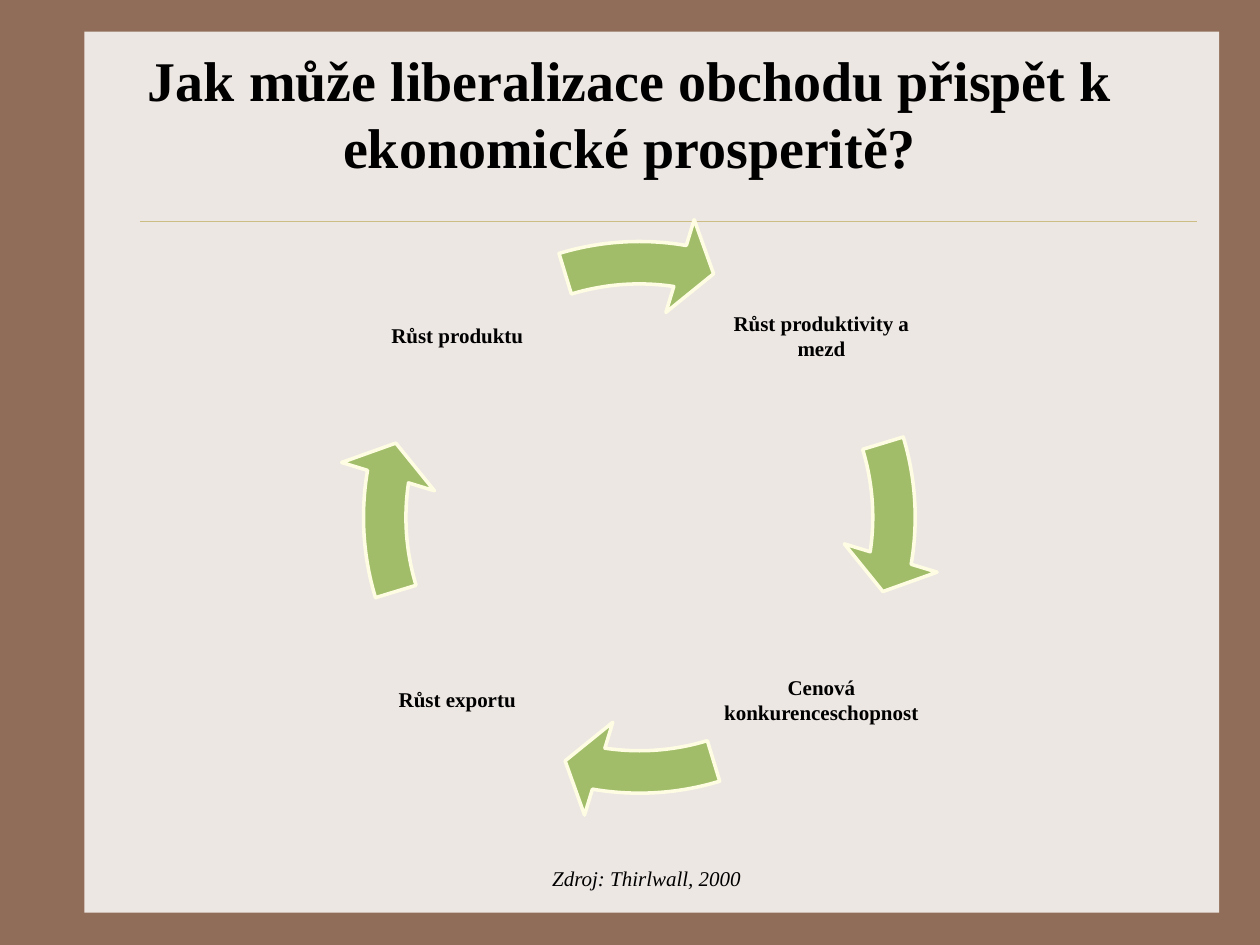
from collections import namedtuple
from dataclasses import dataclass

from lxml import etree
from pptx import Presentation
from pptx import util as u
from pptx.dml.color import RGBColor
from pptx.enum import shapes, text
from pptx.oxml import ns

Box = namedtuple("Box", "left top width height")


@dataclass(frozen=True)
class Theme:
    """Colours, font and type sizes of the slide."""
    background: str = "906D58"
    panel: str = "EDE7E3"
    rule: str = "CBBD83"
    arrow: str = "A1BD69"
    arrow_edge: str = "FEFDE3"
    ink: str = "000000"
    font: str = "Times New Roman"
    title_size: int = 32
    body_size: int = 12


THEME = Theme()
STEPS = [
    ("Růst produktivity a mezd", 1, -1),
    ("Cenová konkurenceschopnost", 1, 1),
    ("Růst exportu", -1, 1),
    ("Růst produktu", -1, -1),
]


def colour(code):
    """Return the colour for a hex code."""
    return RGBColor.from_string(code)


def in_cm(box):
    """Return the sides of a box as lengths."""
    return [u.Cm(side) for side in box]


def write(shape, words, size=THEME.body_size, bold=False, italic=False,
          margins=(0.25, 0.13, 0.25, 0.13), wrap=True, indent=0):
    """Put centred, formatted text in a shape."""
    frame = shape.text_frame
    frame.word_wrap = wrap
    frame.vertical_anchor = text.MSO_ANCHOR.MIDDLE
    (frame.margin_left, frame.margin_top,
     frame.margin_right, frame.margin_bottom) = in_cm(margins)
    paragraph = frame.paragraphs[0]
    paragraph.alignment = text.PP_ALIGN.CENTER
    if indent:
        paragraph._p.get_or_add_pPr().set("indent", str(u.Cm(indent)))
    run = paragraph.add_run()
    run.text = words
    run.font.name, run.font.size = THEME.font, u.Pt(size)
    run.font.bold, run.font.italic = bold, italic
    run.font.color.rgb = colour(THEME.ink)


def add_panel(slide, box):
    """Draw the light panel and its rule behind the title."""
    panel = slide.shapes.add_shape(shapes.MSO_SHAPE.RECTANGLE, *in_cm(box))
    panel.shadow.inherit = False
    panel.fill.solid()
    panel.fill.fore_color.rgb = colour(THEME.panel)
    panel.line.fill.background()
    left, right, height = box.left + 1.12, box.left + 22.43, box.top + 3.81
    rule = slide.shapes.add_connector(
        shapes.MSO_CONNECTOR.STRAIGHT, *in_cm((left, height, right, height)))
    rule.line.color.rgb = colour(THEME.rule)
    rule.line.width = u.Pt(0.25)
    etree.SubElement(rule._element.spPr, ns.qn("a:effectLst"))
    for shape in (panel, rule):
        slide.shapes.title.element.addprevious(shape.element)


def add_title(slide, box):
    """Place and format the title, raised above the rule."""
    title = slide.shapes.title
    title.left, title.top, title.width, title.height = in_cm(box)
    write(title, "Jak může liberalizace obchodu přispět k ekonomické prosperitě?",
          size=THEME.title_size, bold=True, margins=(0.25, 0.13, 0.25, 1.4))


def add_cycle(slide, box):
    """Draw the four steps, each followed by a curved arrow."""
    group = slide.shapes.add_group_shape().shapes
    node, offset = 4.32, 3.67
    quarter, turn = 54, 216
    for index, (words, across, down) in enumerate(STEPS):
        label = group.add_textbox(*in_cm((
            box.left + (box.width - node) / 2 + across * offset,
            box.top + (box.height - node) / 2 + down * offset, node, node)))
        write(label, words, bold=True, margins=(0.05,) * 4)
        arrow = group.add_shape(shapes.MSO_SHAPE.CIRCULAR_ARROW, *in_cm(box))
        arrow.shadow.inherit = False
        end = (5.52 + index * quarter) % turn
        start = (205.84 + index * quarter) % turn
        for place, value in enumerate((0.07, 4.65, end, start, 0.08)):
            arrow.adjustments[place] = value
        arrow.fill.solid()
        arrow.fill.fore_color.rgb = colour(THEME.arrow)
        arrow.line.color.rgb = colour(THEME.arrow_edge)
        arrow.line.width = u.Pt(2)


def add_source(slide, box):
    """Write the source line under the cycle."""
    source = slide.shapes.add_textbox(*in_cm(box))
    write(source, "Zdroj: Thirlwall, 2000", italic=True, wrap=False, indent=0.97)
    source.text_frame.auto_size = text.MSO_AUTO_SIZE.SHAPE_TO_FIT_TEXT


def main():
    """Build and save the slide."""
    presentation = Presentation()
    presentation.slide_width, presentation.slide_height = u.Cm(25.4), u.Cm(19.05)
    slide = presentation.slides.add_slide(
        presentation.slide_layouts.get_by_name("Title Only"))
    slide.background.fill.solid()
    slide.background.fill.fore_color.rgb = colour(THEME.background)
    add_panel(slide, Box(1.7, 0.64, 22.88, 17.76))
    add_title(slide, Box(0, 1.32, 25.4, 3.18))
    add_cycle(slide, Box(6.78, 4.32, 12.22, 12.22))
    add_source(slide, Box(9.91, 17.32, 5.28, 0.76))
    presentation.save("out.pptx")


if __name__ == "__main__":
    main()
